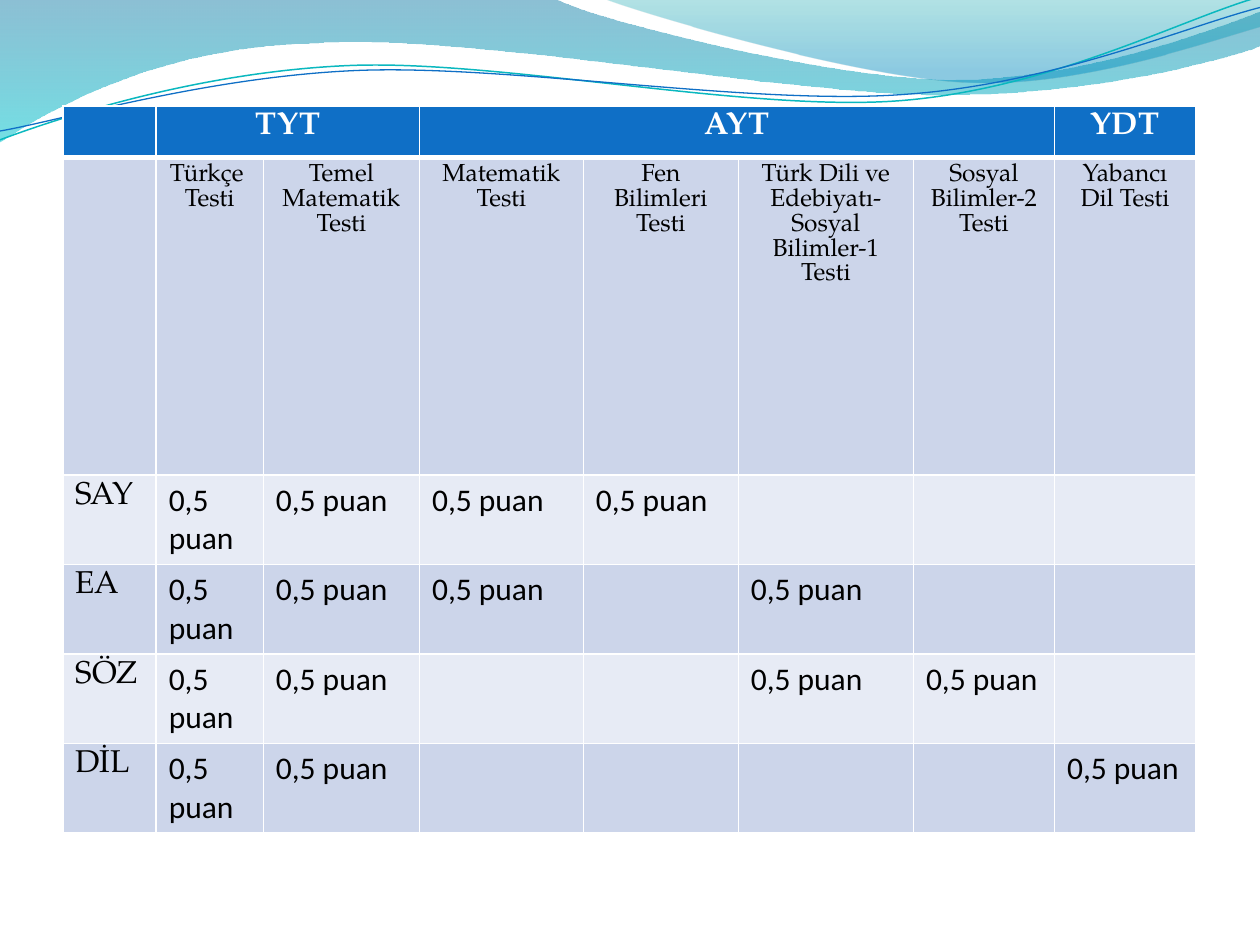
"""Build the slide with the score table of TYT, AYT and YDT tests."""
import math

from lxml import etree
from pptx import Presentation
from pptx import util as u
from pptx.dml.color import RGBColor
from pptx.enum import text
from pptx.oxml.ns import qn

COLORS = {
    "header": "0F6FC6", "dark band": "CCD5EA", "light band": "E7EBF5",
    "white": "FFFFFF", "black": "000000", "teal line": "0AB8BF",
    "deep blue": "0074A1", "cyan": "00C6CF", "teal": "00A1A9", "sky": "008BBF",
}
SERIF, SANS = "TeX Gyre Pagella", "Calibri"


def draw_outline(slide, segments, closed, tilt=0, middle=(0, 0)):
    """Draw a freeform of points, where a segment of three points is a cubic curve."""
    sine, cosine = math.sin(math.radians(tilt)), math.cos(math.radians(tilt))
    points = []
    for segment in segments:
        for x, y in zip(segment[::2], segment[1::2]):
            across, down = x - middle[0], y - middle[1]
            points.append((u.Inches(middle[0] + across * cosine - down * sine),
                           u.Inches(middle[1] + across * sine + down * cosine)))
    builder = slide.shapes.build_freeform(*points[0], scale=1.0)
    builder.add_line_segments(points[1:], close=closed)
    shape = builder.convert_to_shape()
    shape.shadow.inherit = False
    shape.rotation = -tilt
    corners = iter(list(shape.element.spPr.iter(qn("a:lnTo"))))
    for segment in segments[1:]:
        first, *others = [next(corners) for _ in segment[::2]]
        if others:
            first.tag = qn("a:cubicBezTo")
        for corner in others:
            first.append(corner[0])
            corner.getparent().remove(corner)
    return shape


def write(cell, words, font=SERIF, size=18, color="black", bold=False, align=None):
    """Put text in a cell, one paragraph for each line."""
    cell.text_frame.text = words
    for paragraph in cell.text_frame.paragraphs:
        paragraph.alignment = align
        for run in paragraph.runs:
            run.font.name, run.font.size, run.font.bold = font, u.Pt(size), bold
            run.font.color.rgb = RGBColor.from_string(COLORS[color])


presentation = Presentation()
presentation.slide_width, presentation.slide_height = u.Inches(10), u.Inches(7.5)
slide = presentation.slides.add_slide(presentation.slide_layouts[6])

waves = [
    ([(0, 0), (4.4, -0.01), (4.76, 0.17, 6.64, 0.63, 7.58, 0.63), (8.53, 0.63, 9.58, 0.26, 10, 0.09),
      (10.01, 0.36), (9.83, 0.44, 8.7, 0.76, 7.46, 0.75), (6.22, 0.75, 3.82, 0.28, 2.57, 0.34),
      (1.29, 0.36, 0.46, 0.83, -0.01, 1.13), (0, 0)],
     [(0, "deep blue", 45), (1, "cyan", 55)]),
    ([(4.79, -0.01), (5.09, 0.11, 6.82, 0.62, 7.69, 0.65), (8.56, 0.69, 9.61, 0.32, 10, 0.21),
      (10, 0), (4.79, -0.01)],
     [(0, "teal", 30), (0.8, "sky", 45)]),
]
for segments, stops in waves:
    shape = draw_outline(slide, segments, closed=True)
    shape.line.fill.background()
    shape.fill.gradient()
    shape.fill.gradient_angle = 270
    for stop, (position, color, _) in zip(shape.fill.gradient_stops, stops):
        stop.position = position
        stop.color.rgb = RGBColor.from_string(COLORS[color])
    for tint, (_, _, opacity) in zip(shape.element.spPr.iter(qn("a:srgbClr")), stops):
        etree.SubElement(tint, qn("a:alpha"), val=str(opacity * 1000))

ribbons = [
    ([(0, 1.11), (0.48, 0.93, 1.58, 0.57, 2.77, 0.52), (3.95, 0.47, 5.93, 0.89, 7.13, 0.8),
      (8.33, 0.71, 9.38, 0.15, 9.98, -0.02)], (4.99, 0.58), "teal line", 0.85),
    ([(0, 1.04), (0.47, 0.96, 1.64, 0.61, 2.83, 0.56), (4.03, 0.51, 5.97, 0.84, 7.17, 0.75),
      (8.36, 0.67, 9.41, 0.21, 10, 0.06)], (5, 0.59), "header", 0.75),
]
for segments, middle, color, width in ribbons:
    shape = draw_outline(slide, segments, closed=False, tilt=2.7, middle=middle)
    shape.fill.background()
    shape.line.color.rgb = RGBColor.from_string(COLORS[color])
    shape.line.width = u.Pt(width)

column_widths = [0.74, 0.85, 1.24, 1.3, 1.23, 1.39, 1.12, 1.12]
row_heights = [0.41, 2.52] + [0.71] * 4
frame = slide.shapes.add_table(len(row_heights), len(column_widths), u.Inches(0.5), u.Inches(0.84),
                               u.Inches(sum(column_widths)), u.Inches(sum(row_heights)))
table = frame.table
for column, width in zip(table.columns, column_widths):
    column.width = u.Inches(width)
for row, height in zip(table.rows, row_heights):
    row.height = u.Inches(height)

for row_index, row in enumerate(table.rows):
    band = "header" if row_index == 0 else "dark band" if row_index % 2 else "light band"
    for cell in row.cells:
        cell.fill.solid()
        cell.fill.fore_color.rgb = RGBColor.from_string(COLORS[band])
        properties = cell._tc.get_or_add_tcPr()
        for place, side in enumerate("LRTB"):
            heavy = (row_index, side) in ((0, "B"), (1, "T"))
            border = etree.Element(qn(f"a:ln{side}"), w=str(u.Pt(3 if heavy else 1)))
            solid = etree.SubElement(border, qn("a:solidFill"))
            etree.SubElement(solid, qn("a:srgbClr"), val=COLORS["white"])
            properties.insert(place, border)

for first, last, exam in [(1, 2, "TYT"), (3, 6, "AYT"), (7, 7, "YDT")]:
    if last > first:
        table.cell(0, first).merge(table.cell(0, last))
    write(table.cell(0, first), exam, color="white", bold=True, align=text.PP_ALIGN.CENTER)

tests = ["Türkçe \nTesti", "Temel Matematik Testi", "Matematik\nTesti", "Fen Bilimleri Testi",
         "Türk Dili ve Edebiyatı- Sosyal Bilimler-1 Testi", "Sosyal Bilimler-2 Testi", "Yabancı Dil Testi"]
for column, test in enumerate(tests, start=1):
    write(table.cell(1, column), test, size=14, align=text.PP_ALIGN.CENTER)

scored_tests = {"SAY": (1, 2, 3, 4), "EA": (1, 2, 3, 5), "SÖZ": (1, 2, 5, 6), "DİL": (1, 2, 7)}
for row, (field, columns) in enumerate(scored_tests.items(), start=2):
    write(table.cell(row, 0), field)
    for column in columns:
        write(table.cell(row, column), "0,5 puan", font=SANS)

presentation.save("out.pptx")
